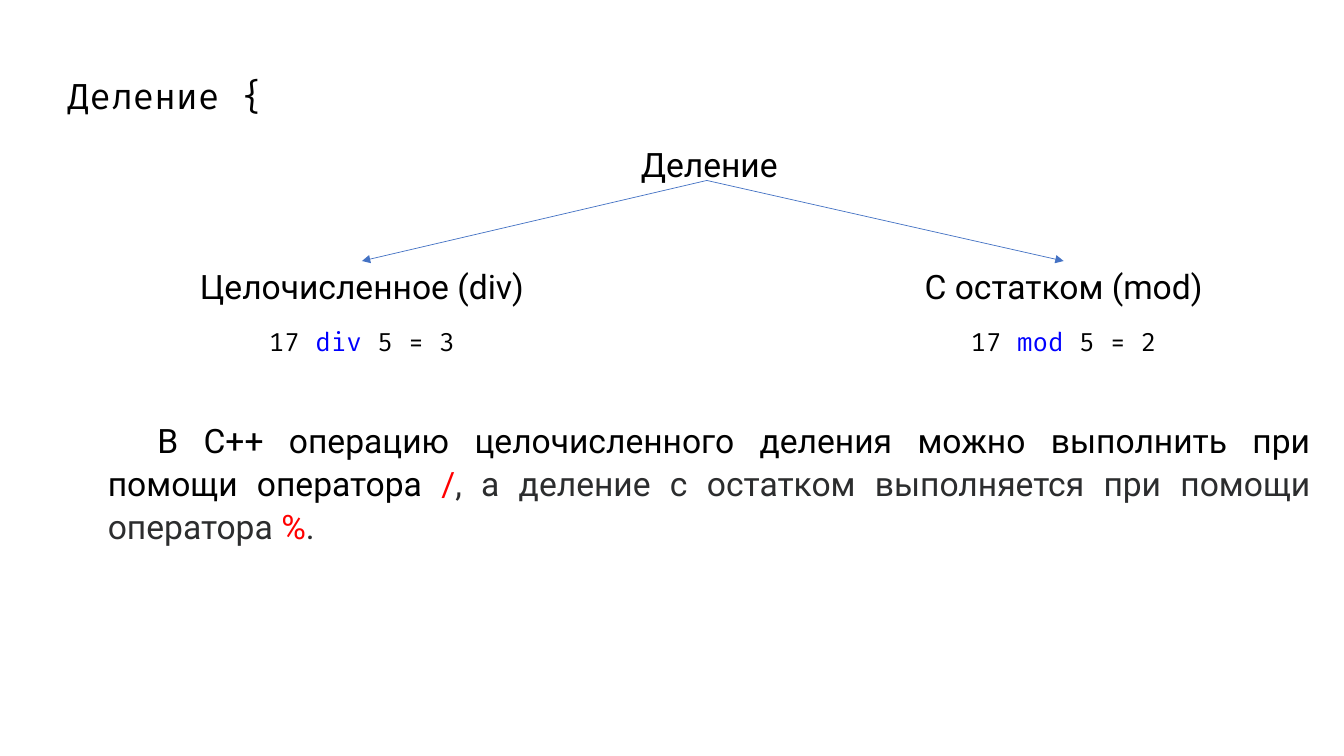
import pptx
import pptx.dml.color
import pptx.enum.shapes
import pptx.enum.text
import pptx.oxml.ns
import pptx.util
from lxml import etree

SLIDE_WIDTH = pptx.util.Inches(13.33)
SLIDE_HEIGHT = pptx.util.Inches(7.5)

BLACK = pptx.dml.color.RGBColor(0x00, 0x00, 0x00)
GRAY = pptx.dml.color.RGBColor(0x2C, 0x2D, 0x2E)
RED = pptx.dml.color.RGBColor(0xFF, 0x00, 0x00)
KEYWORD_BLUE = pptx.dml.color.RGBColor(0x00, 0x00, 0xFF)
ARROW_BLUE = pptx.dml.color.RGBColor(0x44, 0x72, 0xC4)

TEXT_FONT = "Roboto"
CODE_FONT = "Fira Code"
CENTER = pptx.enum.text.PP_ALIGN.CENTER

# Positions are percentages of the slide's width and height.
ROOT = (52.59, 23.87)
LABEL_TOP, LABEL_HEIGHT = 34.53, 6.67
CODE_TOP, CODE_WIDTH, CODE_HEIGHT = 42.53, 15.68, 5.33

# Center, label width, label, operator, result
BRANCHES = [
    (26.93, 25.88, "Целочисленное (div)", "div", "3"),
    (79.14, 22.51, "С остатком (mod)", "mod", "2"),
]


def across(percent):
    return round(SLIDE_WIDTH * percent / 100)


def down(percent):
    return round(SLIDE_HEIGHT * percent / 100)


def box(left, top, width, height):
    return across(left), down(top), across(width), down(height)


def move(shape, left, top, width, height):
    shape.left, shape.top, shape.width, shape.height = box(left, top, width, height)


def add_runs(paragraph, pieces, font, size):
    """Fill a paragraph with (text, colour) pieces in one font."""
    for text, color in pieces:
        run = paragraph.add_run()
        run.text = text
        run.font.name = font
        run.font.size = pptx.util.Pt(size)
        run.font.color.rgb = color


def format_body_paragraph(paragraph, alignment, first_indent, space_before):
    properties = paragraph._p.get_or_add_pPr()
    properties.set("marL", str(pptx.util.Inches(0.25)))
    properties.set("indent", str(pptx.util.Inches(first_indent)))
    etree.SubElement(properties, pptx.oxml.ns.qn("a:buNone"))
    paragraph.alignment = alignment
    paragraph.line_spacing = 1.07
    paragraph.space_before = pptx.util.Pt(space_before)
    paragraph.space_after = pptx.util.Pt(8)


def fill_title(title):
    move(title, 4.28, 9.73, 94, 6.53)
    frame = title.text_frame
    frame.auto_size = pptx.enum.text.MSO_AUTO_SIZE.NONE
    frame.vertical_anchor = pptx.enum.text.MSO_ANCHOR.MIDDLE
    paragraph = frame.paragraphs[0]
    paragraph.alignment = pptx.enum.text.PP_ALIGN.LEFT
    paragraph.line_spacing = 0.9
    add_runs(paragraph, [("Деление {", BLACK)], CODE_FONT, 25.2)


def fill_body(body):
    move(body, 5.4, 18, 92.87, 64)
    frame = body.text_frame
    frame.auto_size = pptx.enum.text.MSO_AUTO_SIZE.NONE
    heading = frame.paragraphs[0]
    format_body_paragraph(heading, CENTER, 0, 0)
    add_runs(heading, [("Деление", BLACK)], TEXT_FONT, 24)

    explanation = frame.add_paragraph()
    format_body_paragraph(explanation, pptx.enum.text.PP_ALIGN.JUSTIFY, 0.49, 158)
    add_runs(explanation, [
        ("В С++ операцию целочисленного деления можно выполнить при помощи оператора ", BLACK),
        ("/", RED),
        (", а деление с остатком выполняется при помощи оператора ", GRAY),
        ("%", RED),
        (".", GRAY),
    ], TEXT_FONT, 24)


def add_arrow(slide, start, end):
    arrow = slide.shapes.add_connector(
        pptx.enum.shapes.MSO_CONNECTOR.STRAIGHT,
        across(start[0]), down(start[1]), across(end[0]), down(end[1]))
    arrow.line.color.rgb = ARROW_BLUE
    arrow.line.width = pptx.util.Pt(0.5)
    etree.SubElement(arrow.line._get_or_add_ln(),
                     pptx.oxml.ns.qn("a:tailEnd"), type="triangle")
    etree.SubElement(arrow._element.spPr, pptx.oxml.ns.qn("a:effectLst"))


def add_centered_text(slide, center, top, width, height, pieces, font, size, wrap):
    shape = slide.shapes.add_textbox(*box(center - width / 2, top, width, height))
    frame = shape.text_frame
    frame.word_wrap = wrap
    frame.auto_size = pptx.enum.text.MSO_AUTO_SIZE.SHAPE_TO_FIT_TEXT
    frame.paragraphs[0].alignment = CENTER
    add_runs(frame.paragraphs[0], pieces, font, size)


def add_branch(slide, center, label_width, label, operator, result):
    add_arrow(slide, ROOT, (center, LABEL_TOP))
    add_centered_text(slide, center, LABEL_TOP, label_width, LABEL_HEIGHT,
                      [(label, BLACK)], TEXT_FONT, 24, False)
    example = [("17 ", BLACK), (operator, KEYWORD_BLUE), (f" 5 = {result}", BLACK)]
    add_centered_text(slide, center, CODE_TOP, CODE_WIDTH, CODE_HEIGHT,
                      example, CODE_FONT, 18, True)


def main():
    presentation = pptx.Presentation()
    presentation.slide_width = SLIDE_WIDTH
    presentation.slide_height = SLIDE_HEIGHT
    slide = presentation.slides.add_slide(presentation.slide_layouts[1])
    fill_title(slide.shapes.title)
    fill_body(slide.placeholders[1])
    for branch in BRANCHES:
        add_branch(slide, *branch)
    presentation.save("out.pptx")


if __name__ == "__main__":
    main()
